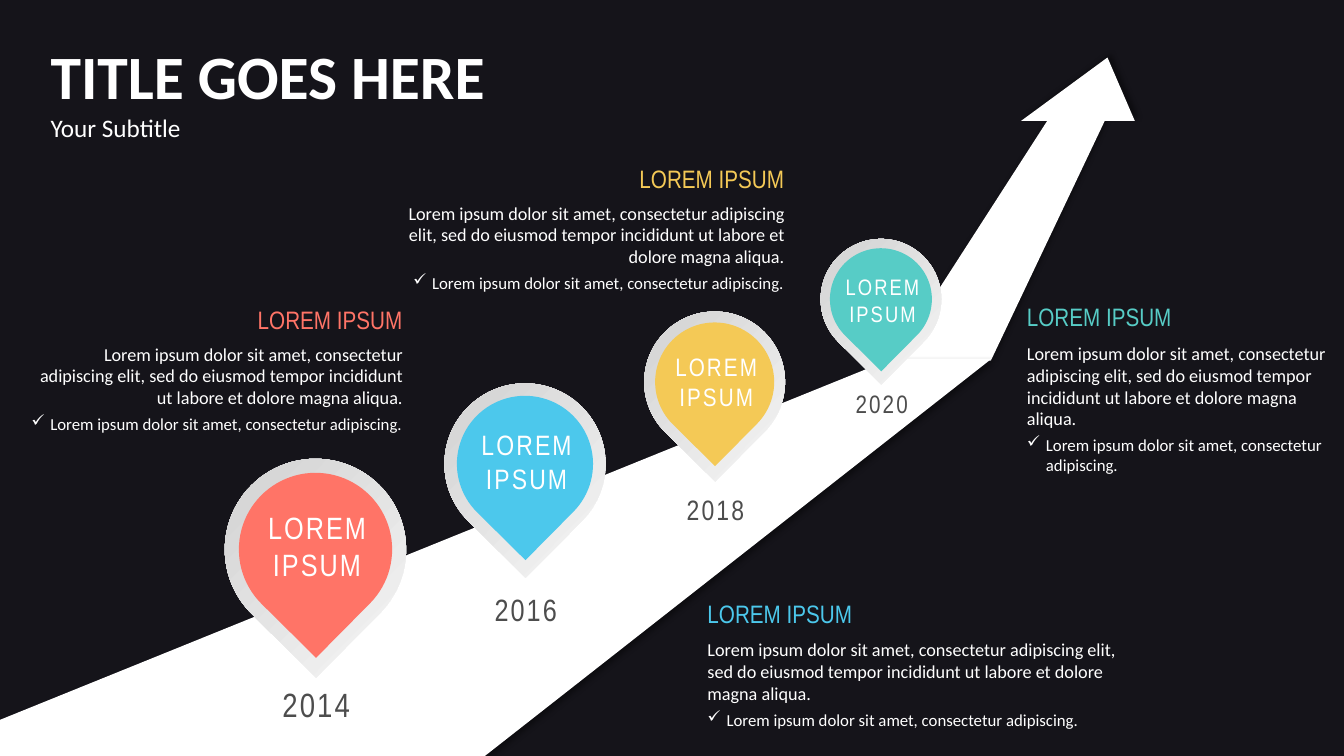
from dataclasses import dataclass

from lxml import etree
from pptx import Presentation
from pptx.dml.color import RGBColor
from pptx.enum import shapes, text
from pptx.oxml import ns
from pptx.util import Cm, Pt


@dataclass(frozen=True)
class Theme:
    background: str = "15141A"
    white: str = "FFFFFF"
    year: str = "4D4D4D"
    coral: str = "FF7467"
    blue: str = "4CC8EC"
    yellow: str = "F4C956"
    teal: str = "57CCC6"
    rim: tuple = ((0, "FAFAFA"), (74, "D7D7D7"), (83, "D7D7D7"), (100, "E4E4E4"))
    body_font: str = "Calibri"
    label_font: str = "Arial Narrow"
    title_size: int = 44
    heading_size: int = 18
    body_size: int = 13
    bullet_size: int = 12
    tracking: int = 150


def add_xml(parent, tag, **attributes):
    return etree.SubElement(parent, ns.qn(tag), {k: str(v) for k, v in attributes.items()})


class SlideBuilder:
    def __init__(self, slide, theme):
        self.slide, self.theme = slide, theme
        fill = slide.background.fill
        fill.solid()
        fill.fore_color.rgb = RGBColor.from_string(theme.background)

    def style(self, paragraph, size, color, font, align=text.PP_ALIGN.LEFT, bold=False, tracking=0):
        paragraph.alignment = align
        paragraph.font.size = Pt(size)
        paragraph.font.name = font
        paragraph.font.bold = bold
        paragraph.font.color.rgb = RGBColor.from_string(color)
        if tracking:
            paragraph.font._element.set("spc", str(tracking))

    def paint(self, shape, color):
        shape.fill.solid()
        shape.fill.fore_color.rgb = RGBColor.from_string(color)
        shape.line.fill.background()
        shape.shadow.inherit = False

    def title(self, heading, subtitle, left, top, width, height):
        title = self.slide.shapes.title
        title.left, title.top, title.width, title.height = map(Cm, (left, top, width, height))
        frame = title.text_frame
        frame.auto_size = text.MSO_AUTO_SIZE.NONE
        frame.vertical_anchor = text.MSO_ANCHOR.TOP
        frame.text = f"{heading}\n{subtitle}"
        t = self.theme
        self.style(frame.paragraphs[0], t.title_size, t.white, t.body_font, bold=True)
        self.style(frame.paragraphs[1], t.heading_size, t.white, t.body_font)

    def text_box(self, lines, left, top, width, height):
        box = self.slide.shapes.add_textbox(*map(Cm, (left, top, width, height)))
        frame = box.text_frame
        frame.word_wrap = True
        frame.text = "\n".join(lines)
        return frame

    def label(self, lines, center, top, width, height, size, color):
        frame = self.text_box(lines, center - width / 2, top, width, height)
        frame.margin_left = frame.margin_right = Cm(0.18)
        frame.margin_top = frame.margin_bottom = Cm(0.08)
        for line in frame.paragraphs:
            self.style(line, size, color, self.theme.label_font,
                       text.PP_ALIGN.CENTER, tracking=self.theme.tracking)

    def arrow_part(self, points, shadow_angle):
        corners = [(Cm(x), Cm(y)) for x, y in points]
        outline = self.slide.shapes.build_freeform(*corners[0])
        outline.add_line_segments(corners[1:], close=True)
        part = outline.convert_to_shape()
        self.paint(part, self.theme.white)
        effects = part._element.spPr.find(ns.qn("a:effectLst"))
        shadow = add_xml(effects, "a:outerShdw", blurRad=Pt(4), dist=Pt(3),
                         dir=shadow_angle * 60000, algn="ctr", rotWithShape=0)
        add_xml(add_xml(shadow, "a:srgbClr", val="000000"), "a:alpha", val=40000)

    def teardrop(self, center_x, center_y, size, color):
        drop = self.slide.shapes.add_shape(
            shapes.MSO_SHAPE.TEAR, Cm(center_x - size / 2), Cm(center_y - size / 2), Cm(size), Cm(size))
        drop.rotation = 134.7
        self.paint(drop, color)
        return drop

    def pin(self, center, top, size, color, label_size):
        middle = top + size / 2
        rim = self.teardrop(center, middle, size, self.theme.white)
        rim.fill.gradient()
        rim.fill.gradient_angle = 270
        stops = rim._element.spPr.find(".//" + ns.qn("a:gsLst"))
        for stop in list(stops):
            stops.remove(stop)
        for position, shade in self.theme.rim:
            add_xml(add_xml(stops, "a:gs", pos=position * 1000), "a:srgbClr", val=shade)
        self.teardrop(center, middle, size * 0.845, color)
        self.label(("LOREM", "IPSUM"), center + 0.04, top + size * 0.257,
                   size * 0.81, size * 0.46, label_size, self.theme.white)

    def story(self, heading, body, point, area, color, align, body_gap):
        t = self.theme
        title, summary, bullet = self.text_box((heading, body, point), *area).paragraphs
        summary.space_before = Pt(body_gap)
        bullet.space_before = Pt(3.7)
        properties = bullet._p.get_or_add_pPr()
        properties.set("marL", str(Cm(0.48)))
        properties.set("indent", str(-Cm(0.48)))
        add_xml(properties, "a:buChar", char="✓")
        self.style(title, t.heading_size, color, t.label_font, align)
        self.style(summary, t.body_size, t.white, t.body_font, align)
        self.style(bullet, t.bullet_size, t.white, t.body_font, align)


def main():
    deck = Presentation()
    deck.slide_width, deck.slide_height = Cm(33.87), Cm(19.05)
    theme = Theme()
    page = SlideBuilder(deck.slides.add_slide(deck.slide_layouts[5]), theme)
    page.title("TITLE GOES HERE", "Your Subtitle", 1.02, 0.84, 16.51, 2.9)

    # Rising arrow: head, then shaft
    page.arrow_part([(27.91, 1.45), (28.6, 3.05), (27.84, 3.05), (24.97, 9.09),
                     (22.5, 9.09), (26.39, 3.05), (25.73, 3.05)], 315)
    page.arrow_part([(22.48, 9.04), (24.99, 9.04), (12.22, 19.05), (0, 19.05), (0, 18.14)], 45)

    # Milestones shrink with distance: year, center, pin top, year top, color
    milestones = [
        ("2014", 7.95, 11.56, 17.15, theme.coral),
        ("2016", 13.23, 9.66, 14.81, theme.blue),
        ("2018", 18.01, 7.85, 12.32, theme.yellow),
        ("2020", 22.2, 6.02, 9.7, theme.teal),
    ]
    for step, (year, center, pin_top, year_top, color) in enumerate(milestones):
        page.label([year], center + 0.02, year_top, 2.6, 1.1, 24 - 2 * step, theme.year)
        page.pin(center, pin_top, 4.57 - 0.51 * step, color, 22 - 2 * step)

    # Descriptions beside the arrow
    point = "Lorem ipsum dolor sit amet, consectetur adipiscing."
    body = ("Lorem ipsum dolor sit amet, consectetur adipiscing elit, sed do eiusmod "
            "tempor incididunt ut labore et dolore magna aliqua.")
    left, right = text.PP_ALIGN.LEFT, text.PP_ALIGN.RIGHT
    for area, color, align, body_gap in [
        ((0.48, 7.54, 9.91, 4.19), theme.coral, right, 6),
        ((9.55, 3.99, 10.46, 3.68), theme.yellow, right, 6),
        ((17.58, 14.94, 10.97, 3.68), theme.blue, left, 7.5),
        ((25.63, 7.47, 8.23, 4.75), theme.teal, left, 7.5),
    ]:
        page.story("LOREM IPSUM", body, point, area, color, align, body_gap)

    deck.save("out.pptx")


if __name__ == "__main__":
    main()
